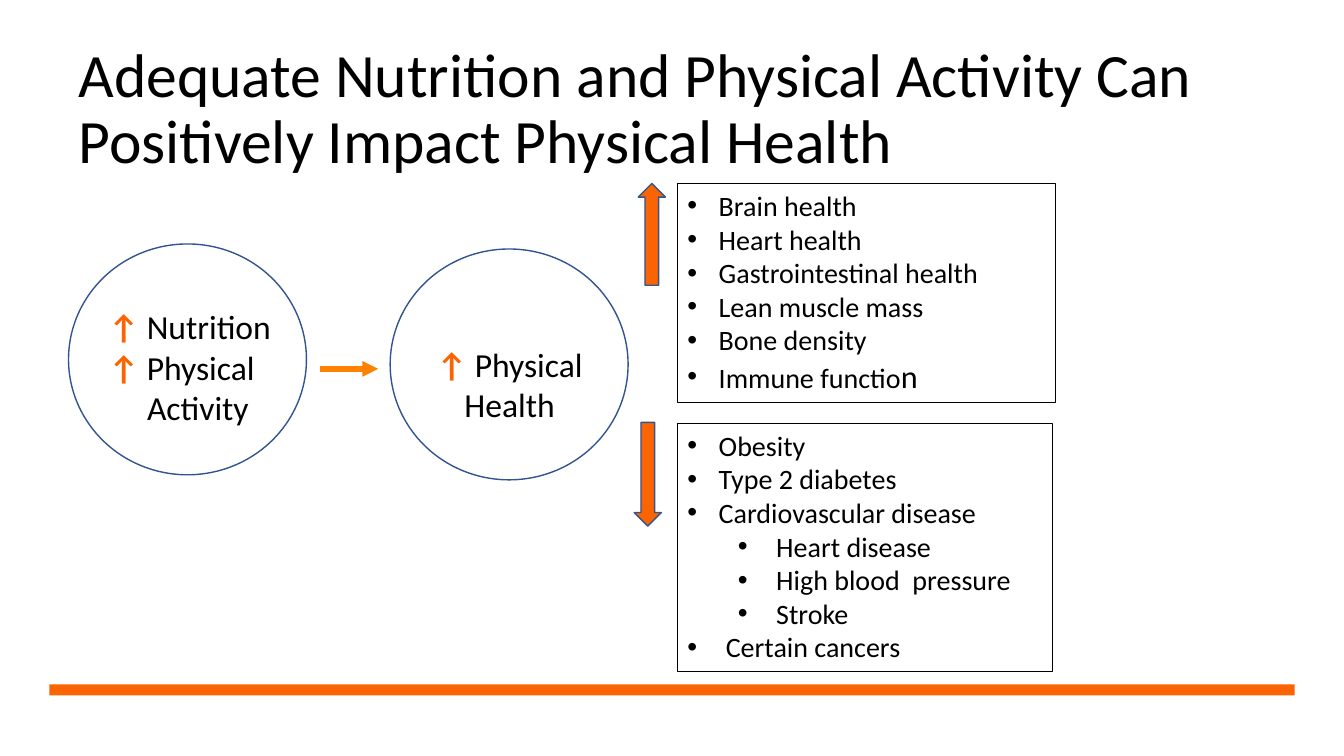
from dataclasses import dataclass

from lxml.etree import SubElement
from pptx import Presentation
from pptx.dml.color import RGBColor
from pptx.enum.shapes import MSO_CONNECTOR, MSO_SHAPE
from pptx.enum.text import MSO_ANCHOR, PP_ALIGN
from pptx.oxml.ns import qn
from pptx.util import Inches, Pt

TITLE = "Adequate Nutrition and Physical Activity Can Positively Impact Physical Health"
# Each circle: left, top
CIRCLES = [(0.68, 2.42), (3.87, 2.47)]
CIRCLE_SIZE = (2.36, 2.29)
# Each label: box, alignment, lines as (marker, words, left margin)
LABELS = [
    ((0.98, 2.99, 2.29, 1.32), PP_ALIGN.LEFT,
     [("↑ ", "Nutrition", 0), ("↑ ", "Physical", 0), ("", "Activity", 0.38)]),
    ((4.16, 3.36, 1.79, 0.91), PP_ALIGN.CENTER, [("↑ ", "Physical Health", 0)]),
]
# Bullet indents: left margin, hanging
MAIN, SUB, WIDE = (0.31, 0.31), (0.88, 0.38), (0.38, 0.38)
# Each outcome list: box, items as (indent, (text, size role) runs)
OUTCOMES = [
    ((6.72, 1.82, 3.75, 2.17), [
        (MAIN, [("Brain health", "body")]),
        (MAIN, [("Heart health", "body")]),
        (MAIN, [("Gastrointestinal health", "body")]),
        (MAIN, [("Lean muscle mass", "body")]),
        (MAIN, [("Bone density", "body")]),
        (MAIN, [("Immune functio", "body"), ("n", "last_letter")]),
    ]),
    ((6.72, 4.2, 3.72, 2.46), [
        (MAIN, [("Obesity", "body")]),
        (MAIN, [("Type 2 diabetes", "body")]),
        (MAIN, [("Cardiovascular disease", "body")]),
        (SUB, [("Heart disease", "body")]),
        (SUB, [("High blood  pressure", "body")]),
        (SUB, [("Stroke", "body")]),
        (WIDE, [("Certain cancers", "body")]),
    ]),
]
TRENDS = [
    (MSO_SHAPE.UP_ARROW, (6.33, 1.82, 0.27, 1.01)),
    (MSO_SHAPE.DOWN_ARROW, (6.29, 4.19, 0.27, 1.03)),
]
LINK = (3.17, 3.66, 3.75, 3.66)
FOOTER_BAR = (0.49, 6.79, 12.35, 0.11)


@dataclass(frozen=True)
class Theme:
    font: str = "Calibri"
    ink: RGBColor = RGBColor(0, 0, 0)
    accent: RGBColor = RGBColor(0xFA, 0x64, 0x02)
    outline: RGBColor = RGBColor(0x32, 0x54, 0x91)
    link: RGBColor = RGBColor(0xFF, 0x81, 0x00)
    title: int = 44
    label: int = 24
    body: int = 20
    last_letter: int = 23


THEME = Theme()


def inches(values):
    return [Inches(value) for value in values]


def add_figure(page, kind, place, fill=None, line=None, width=1):
    shape = page.shapes.add_shape(kind, *inches(place))
    shape.shadow.inherit = False
    if fill is None:
        shape.fill.background()
    else:
        shape.fill.solid()
        shape.fill.fore_color.rgb = fill
    if line is None:
        shape.line.fill.background()
    else:
        shape.line.color.rgb = line
        shape.line.width = Pt(width)
    return shape


def add_text_box(page, place, anchor=MSO_ANCHOR.TOP):
    frame = page.shapes.add_textbox(*inches(place)).text_frame
    frame.word_wrap = True
    frame.vertical_anchor = anchor
    return frame


def paragraphs(frame, items):
    """Yield a paragraph of the frame with each item."""
    for index, item in enumerate(items):
        yield (frame.add_paragraph() if index else frame.paragraphs[0]), item


def set_font(font, size, color=THEME.ink):
    font.name = THEME.font
    font.size = Pt(size)
    font.color.rgb = color


def set_indent(para, left, hanging=0):
    properties = para._p.get_or_add_pPr()
    properties.set("marL", str(Inches(left)))
    properties.set("indent", str(-Inches(hanging)))
    return properties


def add_label(page, place, alignment, lines):
    frame = add_text_box(page, place)
    for para, (marker, words, left) in paragraphs(frame, lines):
        para.alignment = alignment
        set_indent(para, left)
        set_font(para.font, THEME.label)
        if marker:
            span = para.add_run()
            span.text = marker
            span.font.bold = True
            span.font.color.rgb = THEME.accent
        para.add_run().text = words


def add_outcomes(page, place, items):
    box = add_figure(page, MSO_SHAPE.RECTANGLE, place, line=THEME.ink, width=0.75)
    frame = box.text_frame
    frame.word_wrap = True
    frame.vertical_anchor = MSO_ANCHOR.TOP
    for para, (indent, runs) in paragraphs(frame, items):
        para.alignment = PP_ALIGN.LEFT
        para.level = 1 if indent == SUB else 0
        properties = set_indent(para, *indent)
        SubElement(properties, qn("a:buFont"), typeface="Arial")
        SubElement(properties, qn("a:buChar"), char="•")
        set_font(para.font, THEME.body)
        for text, role in runs:
            span = para.add_run()
            span.text = text
            set_font(span.font, getattr(THEME, role))


def add_link(page):
    link = page.shapes.add_connector(MSO_CONNECTOR.STRAIGHT, *inches(LINK))
    link.line.color.rgb = THEME.link
    link.line.width = Pt(3.75)
    SubElement(link.line._get_or_add_ln(), qn("a:tailEnd"), type="triangle")
    SubElement(link._element.spPr, qn("a:effectLst"))


def main():
    deck = Presentation()
    deck.slide_width, deck.slide_height = inches((13.33, 7.5))
    page = deck.slides.add_slide(deck.slide_layouts[6])

    add_figure(page, MSO_SHAPE.RECTANGLE, FOOTER_BAR, fill=THEME.accent)
    title = add_text_box(page, (0.68, 0.37, 12.13, 1.45), MSO_ANCHOR.MIDDLE)
    para = title.paragraphs[0]
    para.text = TITLE
    para.line_spacing = 0.9
    set_font(para.font, THEME.title)

    for corner in CIRCLES:
        add_figure(page, MSO_SHAPE.OVAL, corner + CIRCLE_SIZE, line=THEME.outline)
    for label in LABELS:
        add_label(page, *label)
    add_link(page)
    for kind, place in TRENDS:
        add_figure(page, kind, place, fill=THEME.accent, line=THEME.outline)
    for outcome in OUTCOMES:
        add_outcomes(page, *outcome)

    deck.save("out.pptx")


if __name__ == "__main__":
    main()
